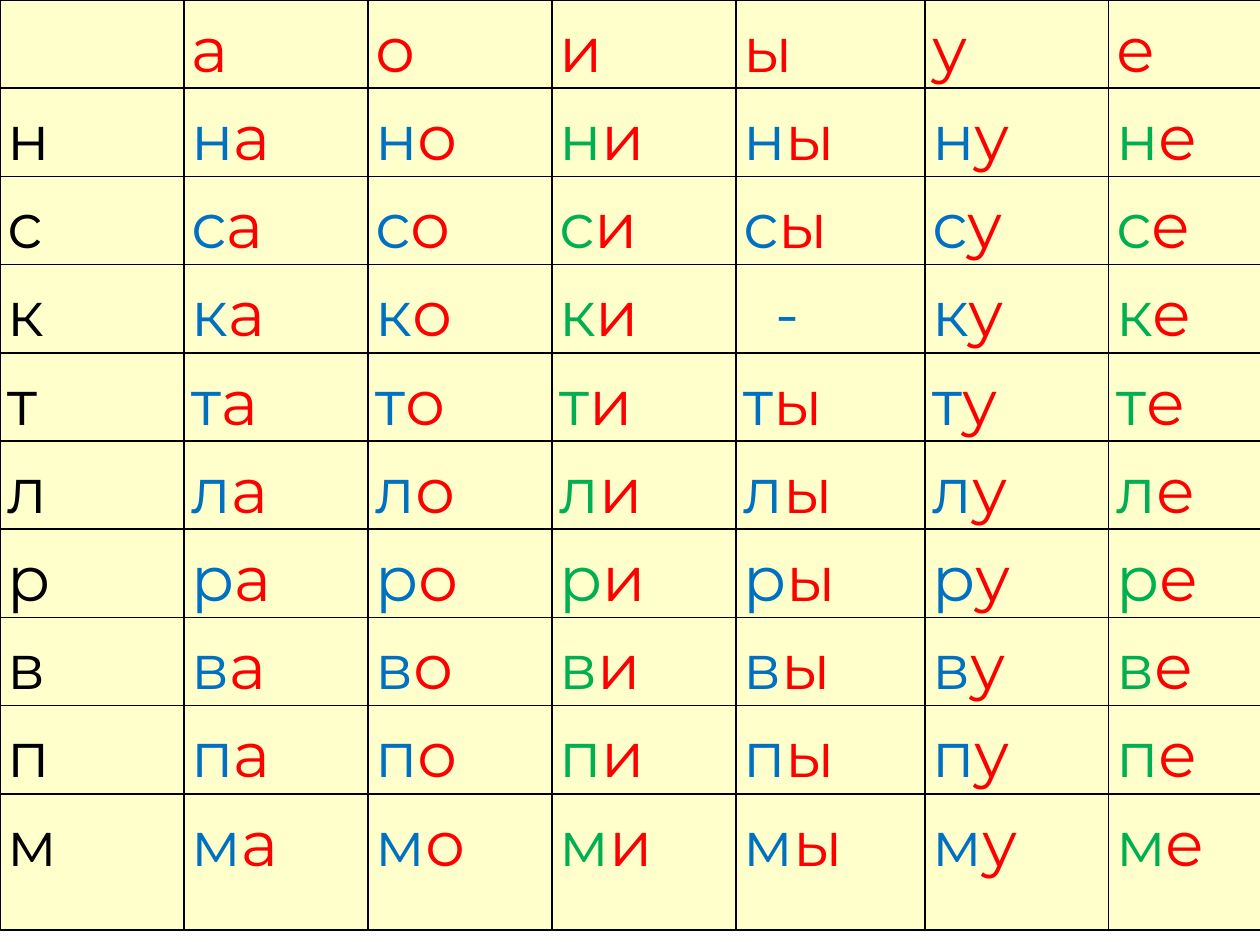
from pptx import Presentation
from pptx.dml.color import RGBColor
from pptx.oxml import parse_xml
from pptx.oxml.ns import nsdecls
from pptx.util import Pt

COLORS = {
    "paper": "FFFFCC",
    "line": "000000",
    "row": "000000",
    "vowel": "FF0000",
    "hard": "0070C0",
    "soft": "00B050",
}
FONT = "Montserrat"
VOWELS = "аоиыуе"
SOFT = "ие"
LETTERS = "нсктлрвпм"
WIDTHS = [105.12] * 4 + [108] + [105.12] * 2
HEIGHTS = [44.64] * 9 + [77.76]
INSET = 4.32
DASH_INSET = 23


def add_border(cell):
    """Draw a thin line on all four sides of a cell."""
    props = cell._tc.get_or_add_tcPr()
    for place, side in enumerate(("lnL", "lnR", "lnT", "lnB")):
        line = parse_xml(
            f'<a:{side} {nsdecls("a")} w="{Pt(1)}"><a:solidFill>'
            f'<a:srgbClr val="{COLORS["line"]}"/></a:solidFill></a:{side}>'
        )
        props.insert(place, line)


def style_cell(cell):
    """Set the fill, margins and borders of a cell."""
    cell.fill.solid()
    cell.fill.fore_color.rgb = RGBColor.from_string(COLORS["paper"])
    cell.margin_left = cell.margin_right = Pt(INSET)
    cell.margin_top = cell.margin_bottom = Pt(0)
    add_border(cell)


def write_runs(cell, runs):
    """Write pairs of text and colour name into a cell."""
    para = cell.text_frame.paragraphs[0]
    para.line_spacing = 1.15
    for text, color in runs:
        run = para.add_run()
        run.text = text
        run.font.name = FONT
        run.font.size = Pt(36)
        run.font.color.rgb = RGBColor.from_string(COLORS[color])


def join_runs(letter, vowel):
    """Return the runs of a syllable, or a dash where none exists."""
    if letter + vowel == "кы":
        return [("-", "hard")]
    kind = "soft" if vowel in SOFT else "hard"
    return [(letter, kind), (vowel, "vowel")]


def add_grid(slide):
    """Add the empty styled table and return it."""
    frame = slide.shapes.add_table(
        len(HEIGHTS), len(WIDTHS), Pt(0), Pt(0), Pt(sum(WIDTHS)), Pt(sum(HEIGHTS))
    )
    table = frame.table
    table.first_row = table.horz_banding = False
    for col, width in zip(table.columns, WIDTHS):
        col.width = Pt(width)
    for row, height in zip(table.rows, HEIGHTS):
        row.height = Pt(height)
    for cell in table.iter_cells():
        style_cell(cell)
    return table


def fill_grid(table):
    """Write the vowels, the consonants and their syllables."""
    for col, vowel in enumerate(VOWELS, 1):
        write_runs(table.cell(0, col), [(vowel, "vowel")])
    for row, letter in enumerate(LETTERS, 1):
        write_runs(table.cell(row, 0), [(letter, "row")])
        for col, vowel in enumerate(VOWELS, 1):
            write_runs(table.cell(row, col), join_runs(letter, vowel))
    dash = table.cell(LETTERS.index("к") + 1, VOWELS.index("ы") + 1)
    dash.margin_left = Pt(DASH_INSET)


def main():
    """Build the syllable table slide and save it."""
    deck = Presentation()
    deck.slide_width, deck.slide_height = Pt(720), Pt(540)
    slide = deck.slides.add_slide(deck.slide_layouts[6])
    fill_grid(add_grid(slide))
    deck.save("out.pptx")


if __name__ == "__main__":
    main()
